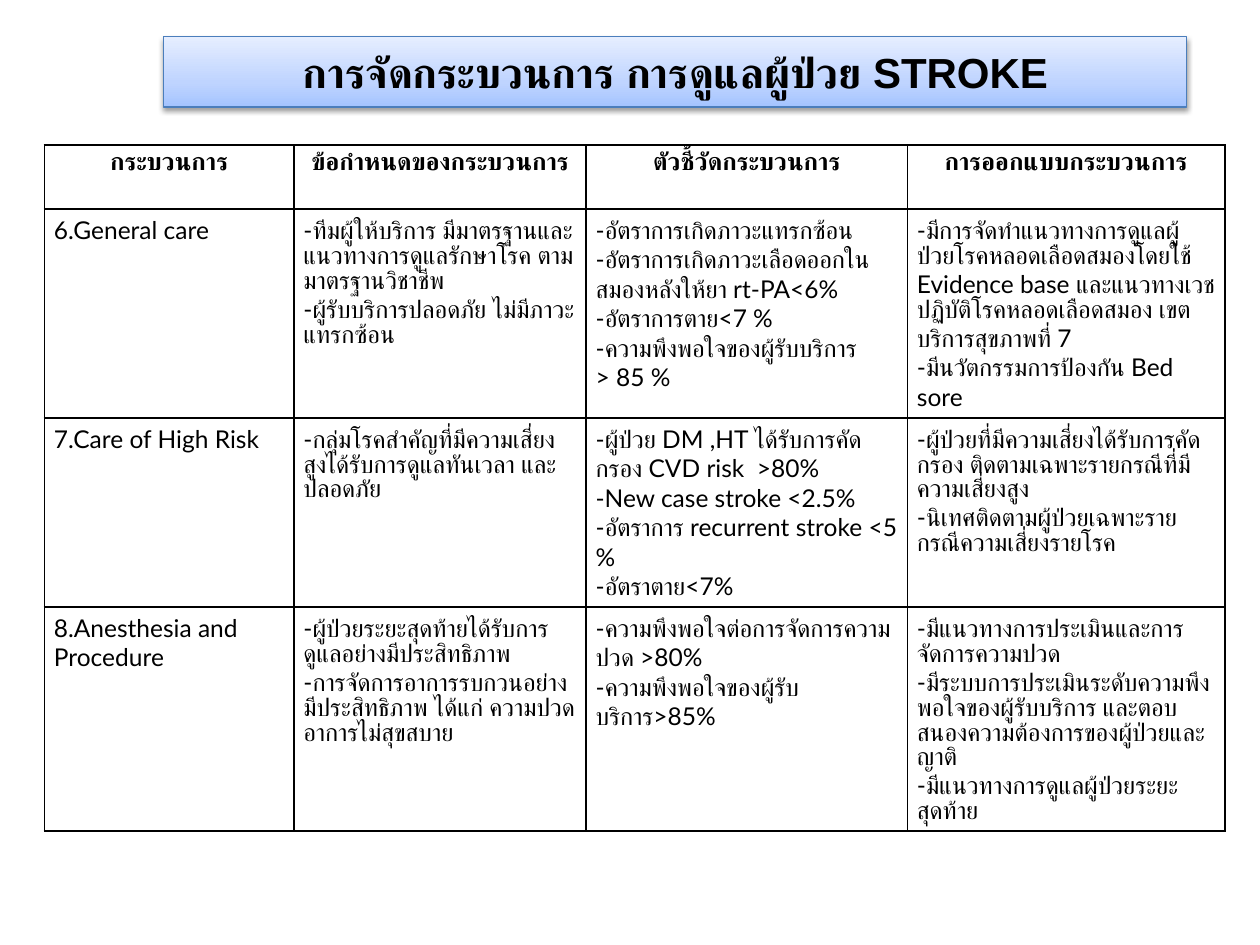
from copy import deepcopy
from typing import NamedTuple

from lxml import etree
from pptx import Presentation
from pptx import util as u
from pptx.dml.color import RGBColor
from pptx.enum import shapes, text
from pptx.oxml.ns import qn

BLACK = "000000"


class Stop(NamedTuple):
    position: float
    color: str


class Process(NamedTuple):
    name: str
    requirements: list[str]
    indicators: list[str]
    design: list[str]


TITLE = "การจัดกระบวนการ การดูแลผู้ป่วย STROKE"
TITLE_STOPS = [Stop(0, "A4C4FF"), Stop(0.35, "BFD4FF"), Stop(1, "E6EEFF")]
HEADINGS = ["กระบวนการ", "ข้อกำหนดของกระบวนการ", "ตัวชี้วัดกระบวนการ", "การออกแบบกระบวนการ"]
COLUMN_WIDTHS = [142.6, 167, 183.6, 181.4]
ROW_HEIGHTS = [36.7, 105.8, 105.8, 106.6]

PROCESSES = [
    Process(
        "6.General care",
        ["-ทีมผู้ให้บริการ มีมาตรฐานและแนวทางการดูแลรักษาโรค ตามมาตรฐานวิชาชีพ",
         "-ผู้รับบริการปลอดภัย ไม่มีภาวะแทรกซ้อน"],
        ["-อัตราการเกิดภาวะแทรกซ้อน",
         "-อัตราการเกิดภาวะเลือดออกในสมองหลังให้ยา rt-PA<6%",
         "-อัตราการตาย<7 %",
         "-ความพึงพอใจของผู้รับบริการ",
         "> 85 %"],
        ["-มีการจัดทำแนวทางการดูแลผู้ป่วยโรคหลอดเลือดสมองโดยใช้ Evidence base "
         "และแนวทางเวชปฏิบัติโรคหลอดเลือดสมอง เขตบริการสุขภาพที่ 7",
         "-มีนวัตกรรมการป้องกัน Bed sore"],
    ),
    Process(
        "7.Care of High Risk",
        ["-กลุ่มโรคสำคัญที่มีความเสี่ยงสูงได้รับการดูแลทันเวลา และปลอดภัย"],
        ["-ผู้ป่วย DM ,HT ได้รับการคัดกรอง CVD risk  >80%",
         "-New case stroke <2.5%",
         "-อัตราการ recurrent stroke <5 %",
         "-อัตราตาย<7%"],
        ["-ผู้ป่วยที่มีความเสี่ยงได้รับการคัดกรอง ติดตามเฉพาะรายกรณีที่มีความเสี่ยงสูง",
         "-นิเทศติดตามผู้ป่วยเฉพาะรายกรณีความเสี่ยงรายโรค"],
    ),
    Process(
        "8.Anesthesia and Procedure",
        ["-ผู้ป่วยระยะสุดท้ายได้รับการดูแลอย่างมีประสิทธิภาพ",
         "-การจัดการอาการรบกวนอย่างมีประสิทธิภาพ ได้แก่ ความปวด",
         "อาการไม่สุขสบาย"],
        ["-ความพึงพอใจต่อการจัดการความปวด >80%",
         "-ความพึงพอใจของผู้รับบริการ>85%"],
        ["-มีแนวทางการประเมินและการจัดการความปวด",
         "-มีระบบการประเมินระดับความพึงพอใจของผู้รับบริการ "
         "และตอบสนองความต้องการของผู้ป่วยและญาติ",
         "-มีแนวทางการดูแลผู้ป่วยระยะสุดท้าย"],
    ),
]


def rgb(color: str) -> RGBColor:
    return RGBColor.from_string(color)


def write(tf, lines: list[str], *, size: float, font: str, bold: bool = False,
          align=text.PP_ALIGN.LEFT, color: str = BLACK) -> None:
    """Put one paragraph per line into a text frame."""
    for i, line in enumerate(lines):
        p = tf.add_paragraph() if i else tf.paragraphs[0]
        p.alignment = align
        r = p.add_run()
        r.text = line
        r.font.size, r.font.name, r.font.bold = u.Pt(size), font, bold
        r.font.color.rgb = rgb(color)


def add_shadow(sp, *, color: str, alpha: int, blur: float, distance: float) -> None:
    """Give a shape a soft shadow that falls straight down."""
    sp.shadow.inherit = False
    effects = sp._element.spPr.find(qn("a:effectLst"))
    shadow = etree.SubElement(effects, qn("a:outerShdw"), blurRad=str(u.Pt(blur)),
                              dist=str(u.Pt(distance)), dir="5400000", rotWithShape="0")
    clr = etree.SubElement(shadow, qn("a:srgbClr"), val=color)
    etree.SubElement(clr, qn("a:alpha"), val=str(alpha * 1000))


def fill_gradient(sp, stops: list[Stop], angle: float) -> None:
    sp.fill.gradient()
    sp.fill.gradient_angle = angle
    stop_list = sp._element.spPr.find(".//" + qn("a:gsLst"))
    while len(stop_list) < len(stops):
        stop_list.append(deepcopy(stop_list[-1]))
    for target, stop in zip(sp.fill.gradient_stops, stops):
        target.position = stop.position
        target.color.rgb = rgb(stop.color)


def add_title(s) -> None:
    sp = s.shapes.add_shape(shapes.MSO_SHAPE.RECTANGLE,
                            u.Pt(93.6), u.Pt(20.9), u.Pt(584.6), u.Pt(40.3))
    fill_gradient(sp, TITLE_STOPS, 90)
    sp.line.color.rgb = rgb("4B7EBC")
    sp.line.width = u.Pt(0.75)
    add_shadow(sp, color=BLACK, alpha=38, blur=3.1, distance=1.6)
    tf = sp.text_frame
    tf.word_wrap = True
    tf.vertical_anchor = text.MSO_ANCHOR.MIDDLE
    write(tf, [TITLE], size=24, font="Arial", bold=True, align=text.PP_ALIGN.CENTER)


def add_borders(cell, width: float = 1, color: str = BLACK) -> None:
    props = cell._tc.get_or_add_tcPr()
    for i, side in enumerate(("lnL", "lnR", "lnT", "lnB")):
        ln = etree.Element(qn(f"a:{side}"), w=str(u.Pt(width)))
        fill = etree.SubElement(ln, qn("a:solidFill"))
        etree.SubElement(fill, qn("a:srgbClr"), val=color)
        props.insert(i, ln)  # borders come before the fill


def fill_cell(cell, lines: list[str], **fmt) -> None:
    cell.fill.background()
    add_borders(cell)
    cell.margin_left = cell.margin_right = u.Pt(5.4)
    cell.margin_top = cell.margin_bottom = u.Pt(3.6)
    write(cell.text_frame, lines, size=14, font="Lato", **fmt)


def add_process_table(s) -> None:
    table = s.shapes.add_table(len(ROW_HEIGHTS), len(COLUMN_WIDTHS), u.Pt(25.4), u.Pt(82.8),
                               u.Pt(sum(COLUMN_WIDTHS)), u.Pt(sum(ROW_HEIGHTS))).table
    table.first_row = table.horz_banding = False
    for column, width in zip(table.columns, COLUMN_WIDTHS):
        column.width = u.Pt(width)
    for row, height in zip(table.rows, ROW_HEIGHTS):
        row.height = u.Pt(height)

    # Heading row
    for cell, heading in zip(table.rows[0].cells, HEADINGS):
        fill_cell(cell, [heading], bold=True, align=text.PP_ALIGN.CENTER)

    # One row per process
    for i, process in enumerate(PROCESSES, start=1):
        columns = [[process.name], *process[1:]]
        for cell, lines in zip(table.rows[i].cells, columns):
            fill_cell(cell, lines)


def main() -> None:
    prs = Presentation()
    prs.slide_width, prs.slide_height = u.Pt(720), u.Pt(540)
    s = prs.slides.add_slide(prs.slide_layouts[6])
    add_title(s)
    add_process_table(s)
    prs.save("out.pptx")


if __name__ == "__main__":
    main()
